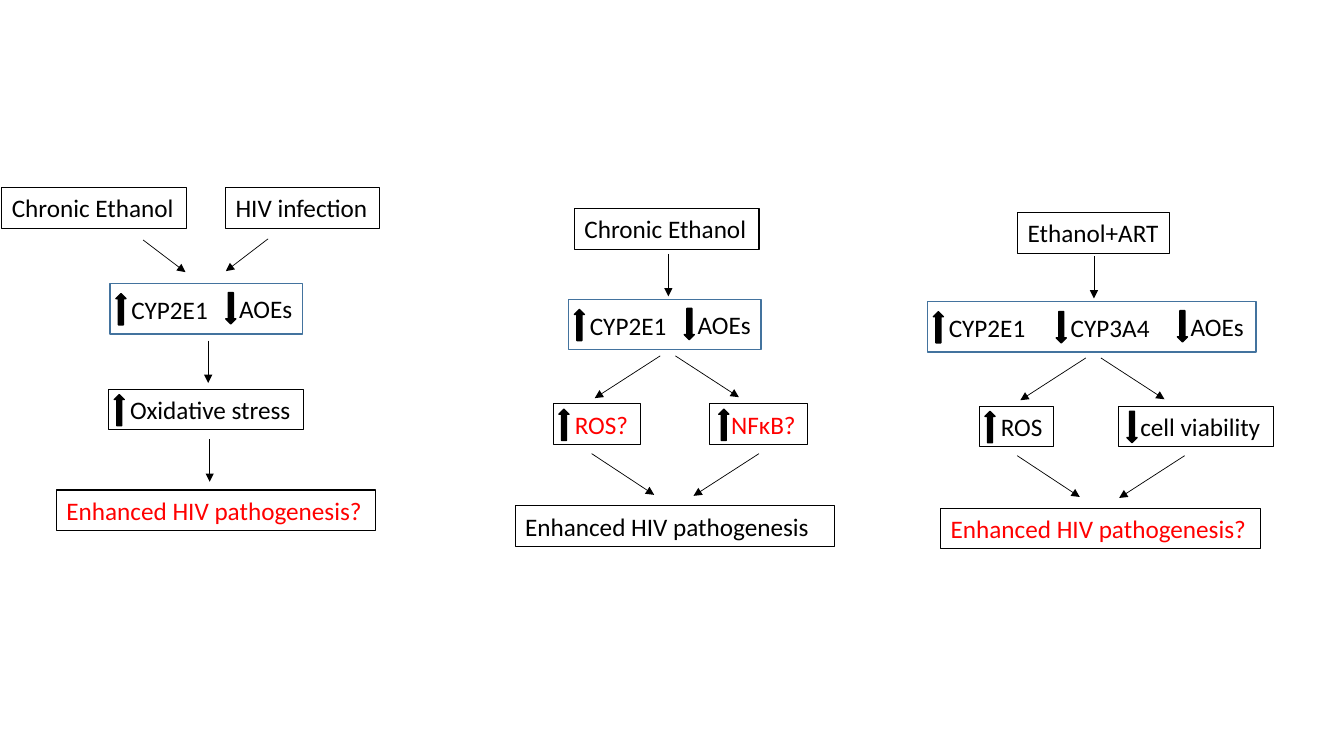
from lxml.etree import SubElement
from pptx import Presentation
from pptx.dml.color import RGBColor
from pptx.enum.shapes import MSO_CONNECTOR as Connector, MSO_SHAPE as Shape
from pptx.enum.text import MSO_ANCHOR as Anchor, PP_ALIGN as Align
from pptx.oxml.ns import qn
from pptx.util import Pt

BLACK = RGBColor(0x00, 0x00, 0x00)
RED = RGBColor(0xFF, 0x00, 0x00)
BLUE = RGBColor(0x43, 0x73, 0x9E)
UP, DOWN = Shape.UP_ARROW, Shape.DOWN_ARROW


class PathwaySlide:
    font, size = "Calibri", 18
    row = 29.1        # height of a one-line box
    inset = 7.2       # usual left margin of text
    indent = 15.3     # left margin of text that follows a marker

    def __init__(self, slide):
        self.shapes = slide.shapes

    def put_text(self, shape, text, color, left):
        frame = shape.text_frame
        frame.word_wrap = True
        frame.vertical_anchor = Anchor.TOP
        frame.margin_left, frame.margin_right = Pt(left), Pt(0)
        frame.margin_top = frame.margin_bottom = Pt(3.6)
        paragraph = frame.paragraphs[0]
        paragraph.alignment = Align.LEFT
        run = paragraph.add_run()
        run.text = text
        run.font.name, run.font.size = self.font, Pt(self.size)
        run.font.color.rgb = color

    def outline(self, x, y, width, height, color=BLACK, weight=0.75):
        shape = self.shapes.add_shape(
            Shape.RECTANGLE, Pt(x), Pt(y), Pt(width), Pt(height))
        shape.shadow.inherit = False
        shape.fill.background()
        shape.line.color.rgb, shape.line.width = color, Pt(weight)
        return shape

    def box(self, x, y, width, text, color=BLACK, left=inset):
        self.put_text(self.outline(x, y, width, self.row), text, color, left)

    def marker(self, x, y, direction):
        shape = self.shapes.add_shape(
            direction, Pt(x), Pt(y), Pt(7.2), Pt(22.3))
        shape.shadow.inherit = False
        shape.fill.solid()
        shape.fill.fore_color.rgb = BLACK
        shape.line.color.rgb, shape.line.width = BLACK, Pt(1)

    def marked_box(self, x, y, width, text, direction=UP, color=BLACK, gap=4):
        self.box(x, y, width, text, color, self.indent)
        self.marker(x + gap, y + 3.8, direction)

    def enzymes(self, x, y, width, items):
        """Blue frame with marked enzyme names, each at its own offset."""
        for offset, label_width, name, direction, gap, rise in items:
            top = y + 4 - rise
            label = self.shapes.add_textbox(
                Pt(x + offset), Pt(top), Pt(label_width), Pt(self.row))
            self.put_text(label, name, BLACK, self.indent)
            self.marker(x + offset + gap, top + 3.2, direction)
        self.outline(x, y, width, 36, BLUE, 1)

    def arrow(self, x1, y1, x2, y2):
        arrow = self.shapes.add_connector(
            Connector.STRAIGHT, Pt(x1), Pt(y1), Pt(x2), Pt(y2))
        arrow.line.color.rgb, arrow.line.width = BLACK, Pt(0.5)
        properties = arrow._element.spPr
        SubElement(properties.find(qn("a:ln")), qn("a:tailEnd"), type="triangle")
        SubElement(properties, qn("a:effectLst"))

    def branching(self, dx, dy, outcome, color):
        """Arrows that split and rejoin, with the outcome box below."""
        for x1, y1, x2, y2 in BRANCH_ARROWS:
            self.arrow(x1 + dx, y1 + dy, x2 + dx, y2 + dy)
        self.box(368 + dx, 361.4 + dy, 228.2, outcome, color)


# Stem, split and merge arrows of a branching pathway
BRANCH_ARROWS = [
    (477.4, 181.4, 477.4, 211.7),
    (471.6, 254.2, 424.8, 284.4),
    (482.4, 254.2, 527.8, 283.7),
    (542.2, 324, 495.4, 354.2),
    (422.6, 324, 467.3, 353.5),
]

# Offset in frame, label width, name, direction, marker gap, rise
CYP2E1 = (0, 82, "CYP2E1", UP, 4.3, 0)
CYP3A4 = (87.1, 82, "CYP3A4", DOWN, 5, 0)
AOES = (77, 65.5, "AOEs", DOWN, 5.8, 0.7)
AOES_FAR = (172.8,) + AOES[1:]


def main():
    prs = Presentation()
    prs.slide_width, prs.slide_height = Pt(960), Pt(540)
    page = PathwaySlide(prs.slides.add_slide(prs.slide_layouts[6]))

    # Ethanol with HIV infection
    page.box(1.4, 133.9, 131.8, "Chronic Ethanol")
    page.box(161.2, 133.9, 110.2, "HIV infection")
    page.arrow(102.2, 171.4, 132.5, 194.4)
    page.arrow(191.5, 170.6, 161.3, 193.7)
    page.enzymes(78.5, 202.5, 137.5, [CYP2E1, AOES])
    page.arrow(148.7, 243.4, 148.7, 273.6)
    page.marked_box(77.6, 278, 139, "Oxidative stress")
    page.arrow(149.8, 313.9, 149.8, 344.2)
    page.box(40.4, 350, 228.2, "Enhanced HIV pathogenesis?", RED)

    # Ethanol alone
    page.box(410.4, 149, 131.8, "Chronic Ethanol")
    page.enzymes(406, 213.8, 137.5, [CYP2E1, AOES])
    page.marked_box(395.3, 288.5, 62.6, "ROS?", color=RED)
    page.marked_box(506.9, 288.5, 69.8, "NFκB?", color=RED, gap=6.5)
    page.branching(0, 0, "Enhanced HIV pathogenesis", BLACK)

    # Ethanol with ART
    page.box(727, 151.8, 108.7, "Ethanol+ART")
    page.enzymes(662.4, 215.4, 234.7, [CYP2E1, CYP3A4, AOES_FAR])
    page.marked_box(699.6, 290, 53.3, "ROS")
    page.marked_box(799.2, 290, 110.2, "cell viability", DOWN, gap=5.8)
    page.branching(304, 1.5, "Enhanced HIV pathogenesis?", RED)

    prs.save("out.pptx")


if __name__ == "__main__":
    main()
